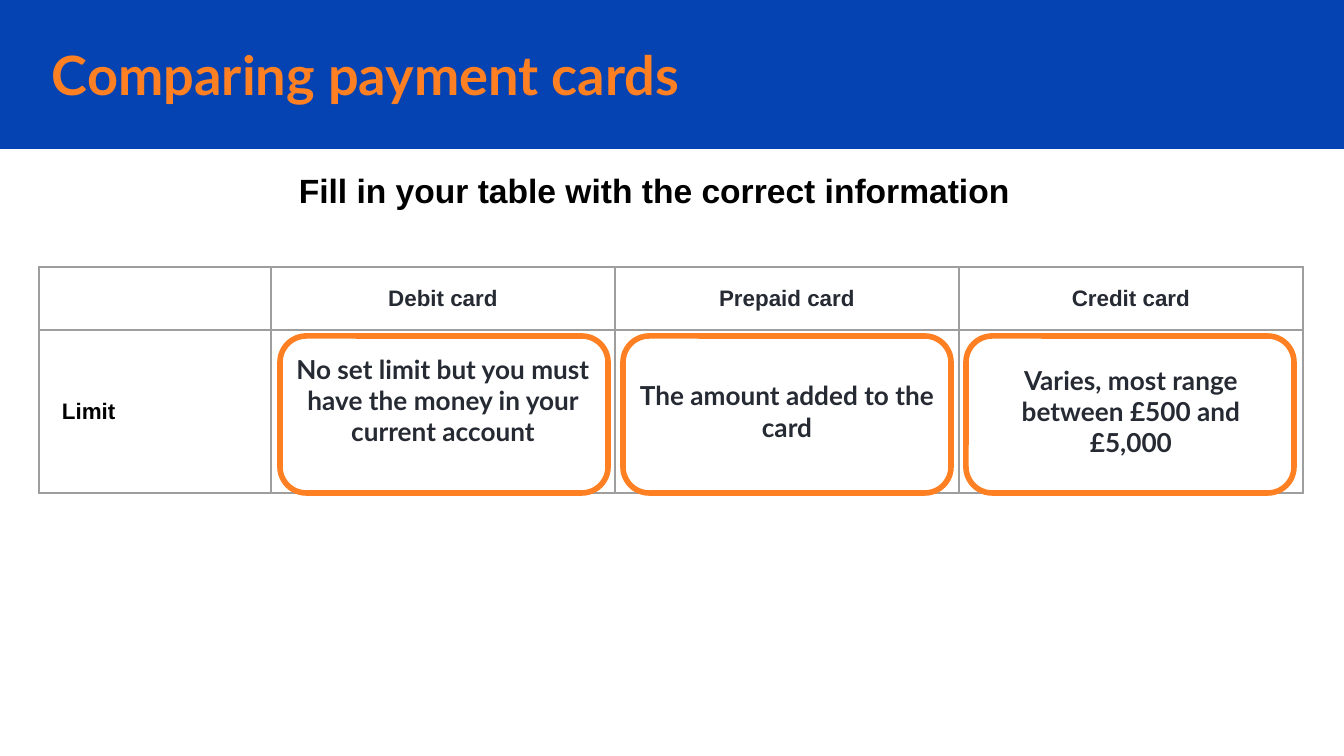
from lxml.etree import SubElement
from pptx import Presentation
from pptx.dml.color import RGBColor
from pptx.enum.shapes import MSO_SHAPE as Shape
from pptx.enum.text import MSO_ANCHOR as Anchor, PP_ALIGN as Align
from pptx.oxml.ns import qn
from pptx.util import Emu, Pt

TITLE = "Comparing payment cards"
INSTRUCTION = "Fill in your table with the correct information"
CARDS = [
    ("Debit card", "No set limit but you must have the money in your current account"),
    ("Prepaid card", "The amount added to the card"),
    ("Credit card", "Varies, most range between £500 and £5,000"),
]
ROW_LABEL = "Limit"

BLUE, ORANGE, WHITE = "0543B3", "FF8022", "FFFFFF"
BLACK, INK, GRID = "000000", "262A33", "9E9E9E"

# Layout in px
SLIDE_WIDTH, SLIDE_HEIGHT = 1344, 756
TABLE_LEFT, TABLE_TOP = 39, 267
LABEL_WIDTH, CARD_WIDTH = 232, 344
HEADER_HEIGHT, ANSWER_HEIGHT = 63, 163
RING_LEFT, RING_TOP, RING_STEP = 280, 336, 343
RING_WIDTH, RING_HEIGHT = 328, 157


def px(value):
    return Emu(round(value * 914400 / 134.4))


def color(value):
    return RGBColor.from_string(value)


def write(frame, text, size, font="Arial", ink=BLACK, align=Align.LEFT):
    paragraph = frame.paragraphs[0]
    paragraph.alignment = align
    run = paragraph.add_run()
    run.text = text
    run.font.size = Pt(size)
    run.font.name = font
    run.font.bold = True
    run.font.color.rgb = color(ink)


def add_text(slide, box, text, anchor=Anchor.TOP, **style):
    frame = slide.shapes.add_textbox(*map(px, box)).text_frame
    frame.word_wrap = True
    frame.vertical_anchor = anchor
    frame.margin_left = frame.margin_right = px(13)
    frame.margin_top = frame.margin_bottom = px(13)
    write(frame, text, **style)


def add_shape(slide, kind, box, fill=None, line=None):
    shape = slide.shapes.add_shape(kind, *map(px, box))
    shape.shadow.inherit = False
    if fill:
        shape.fill.solid()
        shape.fill.fore_color.rgb = color(fill)
    else:
        shape.fill.background()
    if line:
        shape.line.color.rgb = color(line)
        shape.line.width = Pt(3)
    else:
        shape.line.fill.background()


def format_cell(cell, side_margin, end_margin, fill=None):
    cell.vertical_anchor = Anchor.MIDDLE
    cell.margin_left = cell.margin_right = px(side_margin)
    cell.margin_top = cell.margin_bottom = px(end_margin)
    properties = cell._tc.get_or_add_tcPr()
    for side in ("lnL", "lnR", "lnT", "lnB"):
        border = SubElement(properties, qn(f"a:{side}"), w=str(Pt(0.75)))
        solid = SubElement(border, qn("a:solidFill"))
        SubElement(solid, qn("a:srgbClr"), val=GRID)
    if fill:
        cell.fill.solid()
        cell.fill.fore_color.rgb = color(fill)
    else:
        cell.fill.background()


def add_card_table(slide):
    width = LABEL_WIDTH + CARD_WIDTH * len(CARDS)
    box = (TABLE_LEFT, TABLE_TOP, width, HEADER_HEIGHT + ANSWER_HEIGHT)
    table = slide.shapes.add_table(2, len(CARDS) + 1, *map(px, box)).table
    table.first_row = table.horz_banding = False
    for index, column in enumerate(table.columns):
        column.width = px(CARD_WIDTH if index else LABEL_WIDTH)
    for row, height in zip(table.rows, (HEADER_HEIGHT, ANSWER_HEIGHT)):
        row.height = px(height)
    for index in range(len(CARDS) + 1):
        format_cell(table.cell(0, index), 13, 7)
        format_cell(table.cell(1, index), 23, 23, WHITE)

    write(table.cell(1, 0).text_frame, ROW_LABEL, 12)
    for index, (name, limit) in enumerate(CARDS, 1):
        write(table.cell(0, index).text_frame, name, 12, ink=INK, align=Align.CENTER)
        write(table.cell(1, index).text_frame, limit, 14, "Lato", INK, Align.CENTER)
    # The debit answer sits a little above the middle of its cell
    table.cell(1, 1).margin_bottom = px(45)


def main():
    presentation = Presentation()
    presentation.slide_width = px(SLIDE_WIDTH)
    presentation.slide_height = px(SLIDE_HEIGHT)
    slide = presentation.slides.add_slide(presentation.slide_layouts[6])

    add_shape(slide, Shape.RECTANGLE, (0, 0, SLIDE_WIDTH, 149), fill=BLUE)
    add_card_table(slide)
    add_text(slide, (283, 157, 743, 67), INSTRUCTION, size=18, align=Align.CENTER)
    add_text(slide, (39, 36, 1137, 75), TITLE, Anchor.MIDDLE,
             size=29, font="Lato", ink=ORANGE)
    for index in range(len(CARDS)):
        left = RING_LEFT + index * RING_STEP
        add_shape(slide, Shape.ROUNDED_RECTANGLE,
                  (left, RING_TOP, RING_WIDTH, RING_HEIGHT), line=ORANGE)

    presentation.save("out.pptx")


if __name__ == "__main__":
    main()
